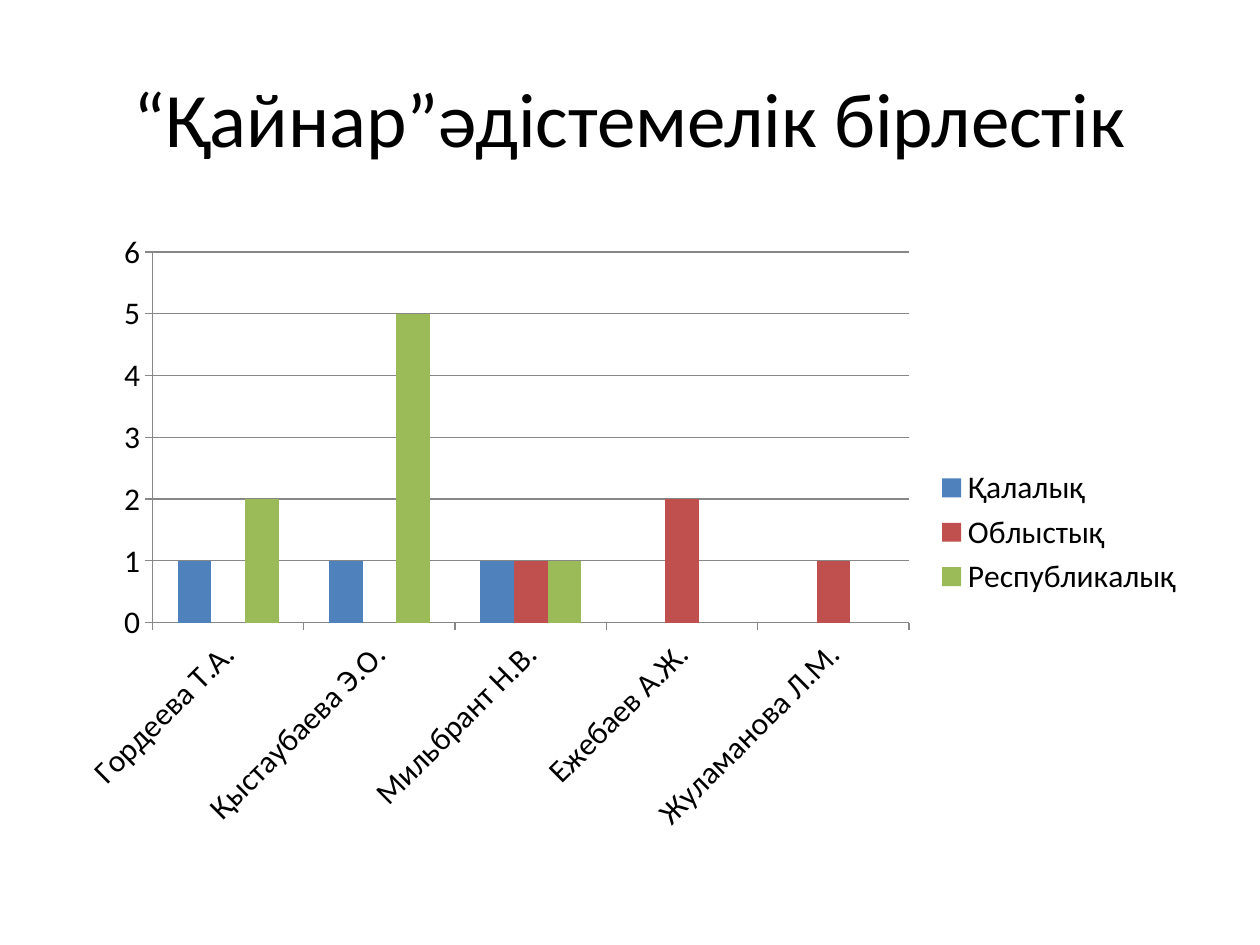
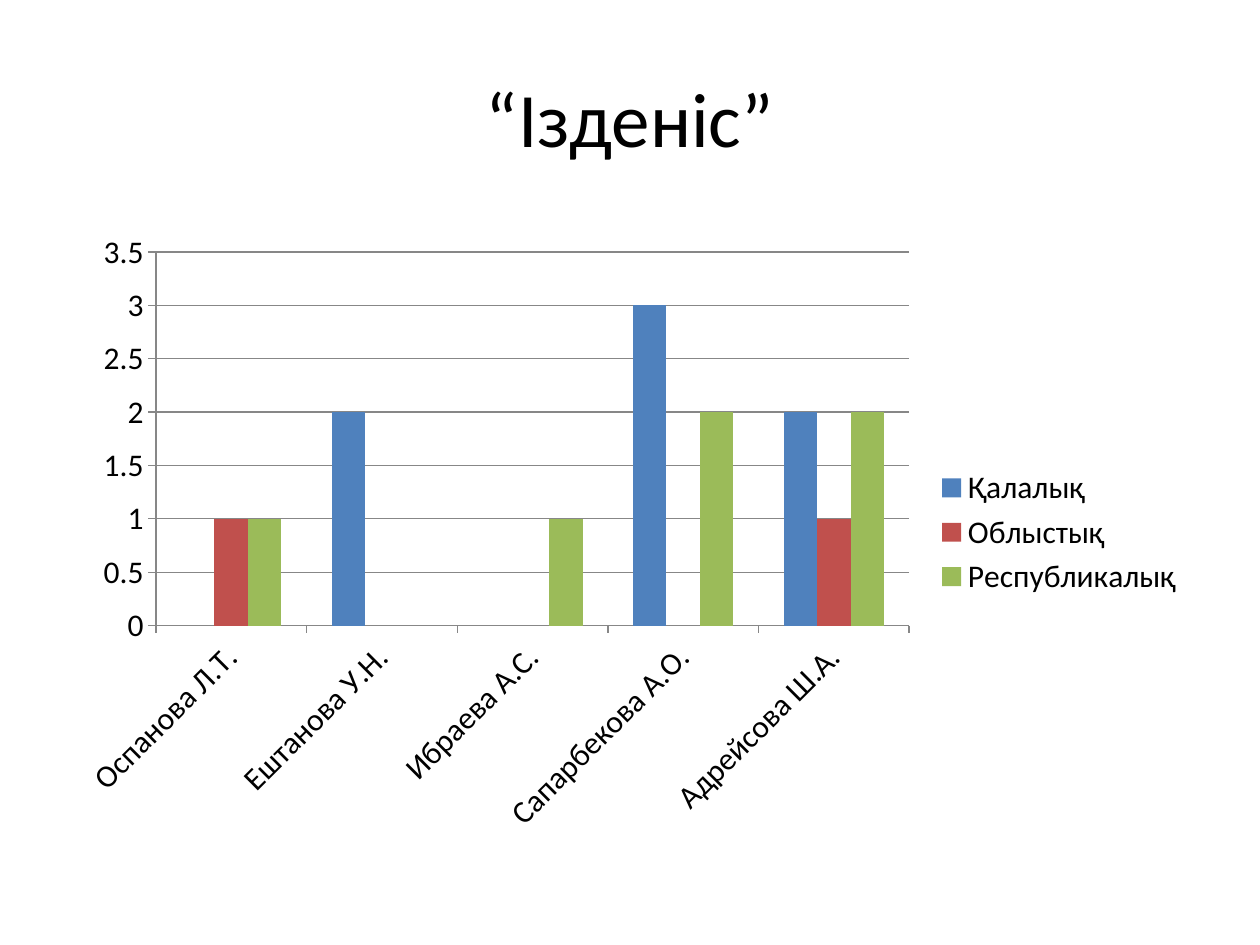
"""Build two slides that chart the results of two teacher groups."""
from pptx import Presentation
from pptx.chart.data import CategoryChartData
from pptx.dml.color import RGBColor
from pptx.enum.chart import XL_CHART_TYPE, XL_LEGEND_POSITION, XL_TICK_MARK
from pptx.enum.text import MSO_ANCHOR, PP_ALIGN
from pptx.util import Pt

FONT = "Calibri"
HUES = {
    "text": "000000",
    "line": "878787",
    "Қалалық": "4F81BD",
    "Облыстық": "C0504D",
    "Республикалық": "9BBB59",
}
LEVELS = ("Қалалық", "Облыстық", "Республикалық")
GROUPS = [
    ("“Қайнар”әдістемелік бірлестік", {
        "Гордеева Т.А.": (1, None, 2),
        "Қыстаубаева Э.О.": (1, None, 5),
        "Мильбрант Н.В.": (1, 1, 1),
        "Ежебаев А.Ж.": (None, 2, None),
        "Жуламанова Л.М.": (None, 1, None),
    }),
    ("“Ізденіс”", {
        "Оспанова Л.Т.": (None, 1, 1),
        "Ештанова У.Н.": (2, None, None),
        "Ибраева А.С.": (None, None, 1),
        "Сапарбекова А.О.": (3, None, 2),
        "Адрейсова Ш.А.": (2, 1, 2),
    }),
]
WIDE, HIGH, EDGE = 720, 540, 36
TITLE = (EDGE, 21.6, WIDE - 2 * EDGE, 90)
CHART = (EDGE, 126, WIDE - 2 * EDGE, 356.4)


def color(name):
    return RGBColor.from_string(HUES[name])


def style(font, size):
    font.name = FONT
    font.size = Pt(size)
    font.bold = False
    font.color.rgb = color("text")


def add_text(slide, text, box, size=44, align=PP_ALIGN.CENTER, anchor=MSO_ANCHOR.MIDDLE):
    frame = slide.shapes.add_textbox(*map(Pt, box)).text_frame
    frame.word_wrap = True
    frame.vertical_anchor = anchor
    par = frame.paragraphs[0]
    par.alignment = align
    run = par.add_run()
    run.text = text
    style(run.font, size)


def add_bars(slide, scores, box, size=18):
    data = CategoryChartData()
    data.categories = list(scores)
    for level, vals in zip(LEVELS, zip(*scores.values())):
        data.add_series(level, vals)
    kind = XL_CHART_TYPE.COLUMN_CLUSTERED
    chart = slide.shapes.add_chart(kind, *map(Pt, box), data).chart
    style(chart.font, size)
    chart.has_title = False
    chart.has_legend = True
    chart.legend.position = XL_LEGEND_POSITION.RIGHT
    chart.legend.include_in_layout = False

    plot = chart.plots[0]
    plot.gap_width = 150
    plot.vary_by_categories = False
    for bars in plot.series:
        bars.format.fill.solid()
        bars.format.fill.fore_color.rgb = color(bars.name)

    grid = chart.value_axis.major_gridlines
    for part in (chart.category_axis, chart.value_axis, grid):
        part.format.line.color.rgb = color("line")
        part.format.line.width = Pt(0.75)
    for axis in (chart.category_axis, chart.value_axis):
        axis.major_tick_mark = XL_TICK_MARK.OUTSIDE


def main():
    deck = Presentation()
    deck.slide_width, deck.slide_height = Pt(WIDE), Pt(HIGH)
    for title, scores in GROUPS:
        slide = deck.slides.add_slide(deck.slide_layouts[6])
        add_text(slide, title, TITLE)
        add_bars(slide, scores, CHART)
    deck.save("out.pptx")


if __name__ == "__main__":
    main()
